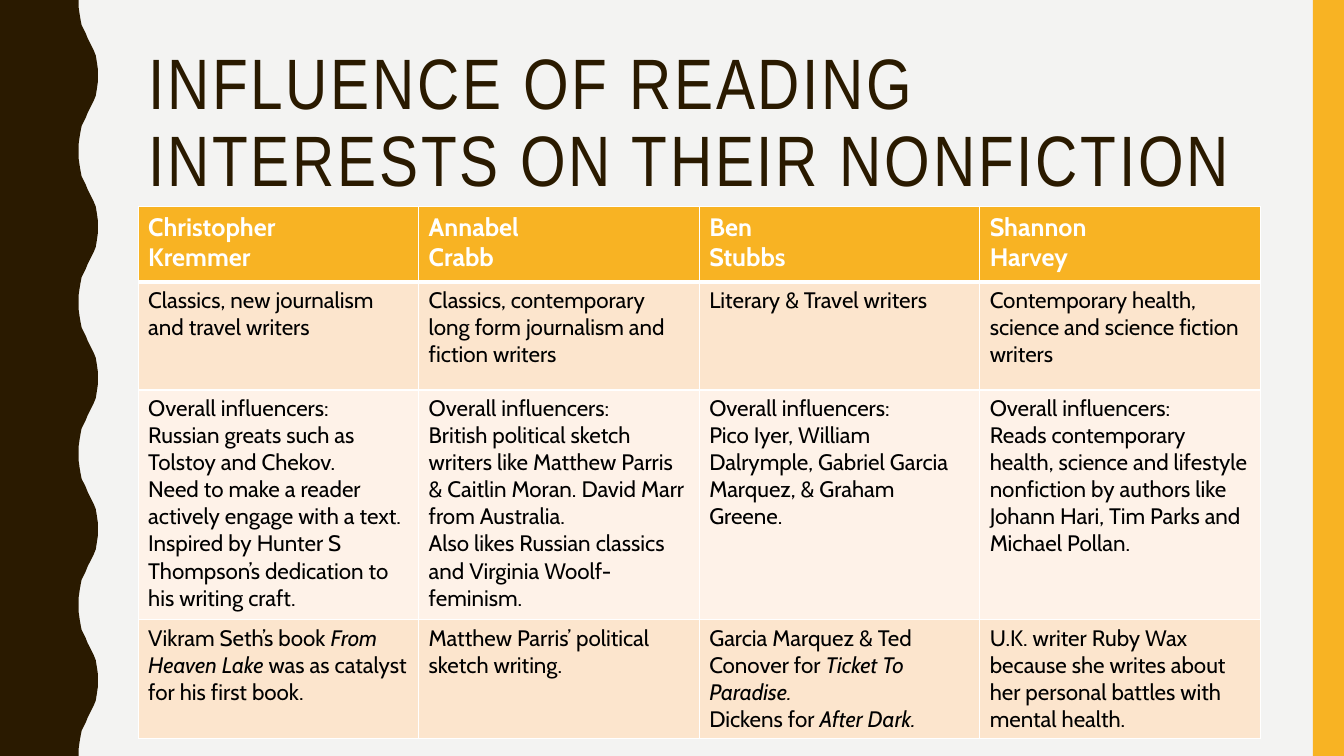
from lxml import etree
from pptx import Presentation, util as u
from pptx.dml.color import RGBColor
from pptx.enum import shapes, text
from pptx.oxml.ns import qn

PX = 9144
WIDTH, HEIGHT = 1333, 750
BROWN, GOLD, WHITE, BLACK = "2A1A00", "F8B323", "FFFFFF", "000000"
PAPER, PEACH, CREAM = "F3F3F2", "FCE5CD", "FEF2E8"

TITLE = "INFLUENCE OF READING INTERESTS ON THEIR NONFICTION"
ROW_HEIGHTS = [75, 107, 228, 107]
ROW_FILLS = [GOLD, PEACH, CREAM, PEACH]
ROWS = [
    ["Christopher\nKremmer", "Annabel\nCrabb", "Ben\nStubbs", "Shannon\nHarvey"],
    [
        "Classics, new journalism and travel writers",
        "Classics, contemporary long form journalism and fiction writers",
        "Literary & Travel writers",
        "Contemporary health, science and science fiction writers",
    ],
    [
        "Overall influencers:\nRussian greats such as Tolstoy and Chekov.\n"
        "Need to make a reader actively engage with a text. Inspired by "
        "Hunter S Thompson’s dedication to his writing craft.",
        "Overall influencers:\nBritish political sketch writers like Matthew Parris "
        "& Caitlin Moran. David Marr from Australia.\n"
        "Also likes Russian classics and Virginia Woolf-feminism.",
        "Overall influencers:\nPico Iyer, William Dalrymple, Gabriel Garcia Marquez, "
        "& Graham Greene.",
        "Overall influencers:\nReads contemporary health, science and lifestyle "
        "nonfiction by authors like Johann Hari, Tim Parks and Michael Pollan.",
    ],
    [
        "Vikram Seth’s book *From Heaven Lake* was as catalyst for his first book.",
        "Matthew Parris’ political sketch writing.",
        "Garcia Marquez & Ted Conover for *Ticket To Paradise.*\n"
        "Dickens for *After Dark.*",
        "U.K. writer Ruby Wax because she writes about her personal battles "
        "with mental health.",
    ],
]
HALF_WAVE = [(78, 0), (78, 7), (79, 14), (80, 20), (81, 25), (83, 29), (85, 33),
             (87, 38), (89, 42), (91, 46), (93, 50), (95, 55), (96, 61), (97, 68), (97, 75)]
WAVE = HALF_WAVE + [(x, 150 - y) for x, y in HALF_WAVE[-2::-1]]


def rgb(value):
    return RGBColor.from_string(value)


class Deck:
    title_font, body_font = "Arial Narrow", "Cabin"

    def __init__(self):
        self.prs = Presentation()
        self.prs.slide_width, self.prs.slide_height = WIDTH * PX, HEIGHT * PX
        self.s = self.prs.slides.add_slide(self.prs.slide_layouts[5])
        self.s.background.fill.solid()
        self.s.background.fill.fore_color.rgb = rgb(PAPER)

    def paint(self, sp, color):
        sp.fill.solid()
        sp.fill.fore_color.rgb = rgb(color)
        sp.line.fill.background()
        sp.shadow.inherit = False

    def outline(self, points, color):
        fb = self.s.shapes.build_freeform(*points[0], scale=PX)
        fb.add_line_segments(points[1:], close=True)
        self.paint(fb.convert_to_shape(), color)

    def rect(self, x, y, w, h, color):
        sp = self.s.shapes.add_shape(shapes.MSO_SHAPE.RECTANGLE, x * PX, y * PX, w * PX, h * PX)
        self.paint(sp, color)

    def run(self, p, words, font, size, color, bold=False, italic=False):
        r = p.add_run()
        r.text = words
        r.font.name, r.font.size = font, u.Pt(size)
        r.font.bold, r.font.italic = bold, italic
        r.font.color.rgb = rgb(color)
        return r

    def title(self, words, x, y, w, h):
        sp = self.s.shapes.title
        sp.left, sp.top, sp.width, sp.height = x * PX, y * PX, w * PX, h * PX
        tf = sp.text_frame
        tf.word_wrap = True
        tf.auto_size = text.MSO_AUTO_SIZE.NONE
        tf.vertical_anchor = text.MSO_ANCHOR.TOP
        p = tf.paragraphs[0]
        p.alignment = text.PP_ALIGN.LEFT
        p.line_spacing = 0.9
        r = self.run(p, words, self.title_font, 51, BROWN)
        r.font._element.set("spc", "200")

    def borders(self, cell, top, bottom):
        tcPr = cell._tc.get_or_add_tcPr()
        widths = {"a:lnL": 1, "a:lnR": 1, "a:lnT": top, "a:lnB": bottom}
        for i, (tag, width) in enumerate(widths.items()):
            ln = etree.Element(qn(tag), w=str(u.Pt(width)))
            fill = etree.SubElement(ln, qn("a:solidFill"))
            etree.SubElement(fill, qn("a:srgbClr"), val=WHITE)
            tcPr.insert(i, ln)

    def cell(self, cell, words, fill, header):
        cell.fill.solid()
        cell.fill.fore_color.rgb = rgb(fill)
        size, color = (18, WHITE) if header else (16, BLACK)
        tf = cell.text_frame
        for i, line in enumerate(words.split("\n")):
            p = tf.add_paragraph() if i else tf.paragraphs[0]
            for j, part in enumerate(line.split("*")):
                if part:
                    self.run(p, part, self.body_font, size, color, header, j % 2 == 1)

    def table(self, rows, heights, fills, x, y, w):
        cols = len(rows[0])
        frame = self.s.shapes.add_table(len(rows), cols, x * PX, y * PX, w * PX, sum(heights) * PX)
        tbl = frame.table
        for col in tbl.columns:
            col.width = w * PX // cols
        for i, row in enumerate(rows):
            tbl.rows[i].height = heights[i] * PX
            for j, words in enumerate(row):
                self.cell(tbl.cell(i, j), words, fills[i], i == 0)
                self.borders(tbl.cell(i, j), 3 if i == 1 else 1, 3 if i == 0 else 1)


def main():
    deck = Deck()
    edge = [(x, y + top) for top in range(0, HEIGHT, 150) for x, y in WAVE]
    deck.outline([(0, 0)] + edge + [(0, HEIGHT)], BROWN)
    deck.rect(1302, 0, 31, HEIGHT, GOLD)
    deck.title(TITLE, 137, 42, 1113, 163)
    deck.table(ROWS, ROW_HEIGHTS, ROW_FILLS, 137, 205, 1113)
    deck.prs.save("out.pptx")


if __name__ == "__main__":
    main()
